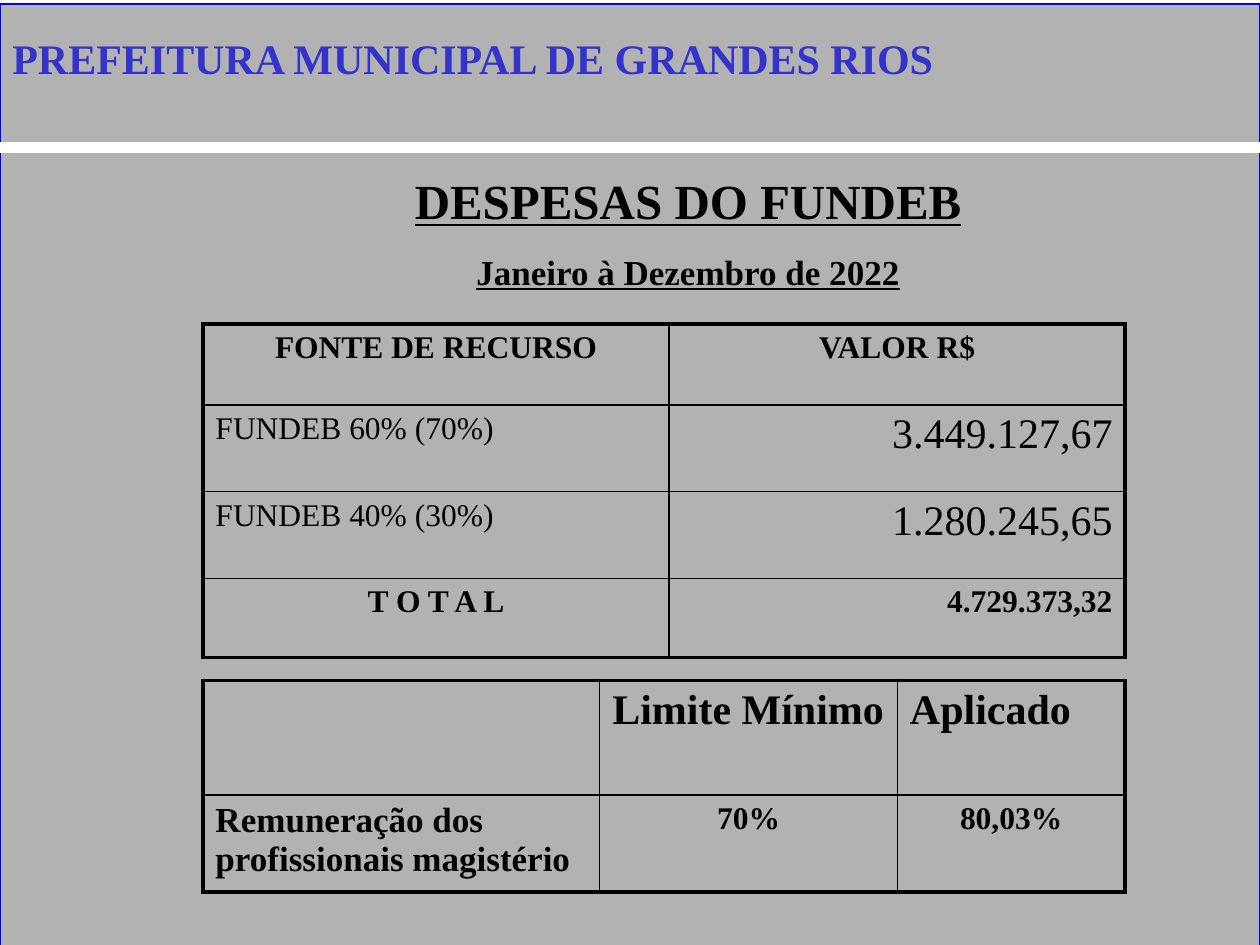
from dataclasses import dataclass

import pptx
import pptx.dml.color
import pptx.enum.shapes
import pptx.enum.text
import pptx.oxml
import pptx.oxml.ns
import pptx.util
from lxml import etree

Cm = pptx.util.Cm
Pt = pptx.util.Pt
ALIGN = pptx.enum.text.PP_ALIGN
FONT = "Times New Roman"
COLOURS = {
    "panel": "B2B2B2",
    "frame": "0000FF",
    "rule": "FFFFFF",
    "ink": "000000",
    "heading": "3333CC",
    "shadow": "808080",
}
OUTER_BORDER = 2.25
INNER_BORDER = 1


@dataclass
class Line:
    text: str
    size: int = 18
    bold: bool = True
    align: ALIGN = ALIGN.LEFT
    colour: str = "ink"
    underline: bool = False
    spacing: float = 1.0


@dataclass
class Grid:
    left: float
    top: float
    columns: list[float]
    rows: list[float]
    cells: list[list[Line]]


def colour(name: str) -> pptx.dml.color.RGBColor:
    return pptx.dml.color.RGBColor.from_string(COLOURS[name])


def write_line(para, line: Line) -> None:
    para.text = line.text
    para.alignment = line.align
    para.line_spacing = line.spacing
    for span in para.runs:
        span.font.name = FONT
        span.font.size = Pt(line.size)
        span.font.bold = line.bold
        span.font.underline = line.underline
        span.font.color.rgb = colour(line.colour)


def add_text(page, left: float, top: float, width: float, height: float, lines: list[Line]):
    box = page.shapes.add_textbox(Cm(left), Cm(top), Cm(width), Cm(height))
    frame = box.text_frame
    frame.word_wrap = True
    frame.text = "\n".join(line.text for line in lines)
    for para, line in zip(frame.paragraphs, lines):
        write_line(para, line)
    return box


def add_text_shadow(span) -> None:
    effects = pptx.oxml.parse_xml(
        f'<a:effectLst {pptx.oxml.ns.nsdecls("a")}>'
        '<a:outerShdw dist="35921" dir="2700000" algn="ctr">'
        f'<a:srgbClr val="{COLOURS["shadow"]}"/></a:outerShdw></a:effectLst>'
    )
    fill = span.font._element.find(pptx.oxml.ns.qn("a:solidFill"))
    fill.addnext(effects)


def add_border(cell, side: str, width: float) -> None:
    properties = cell._tc.get_or_add_tcPr()
    border = etree.SubElement(properties, pptx.oxml.ns.qn(f"a:ln{side}"), w=str(Pt(width)))
    fill = etree.SubElement(border, pptx.oxml.ns.qn("a:solidFill"))
    etree.SubElement(fill, pptx.oxml.ns.qn("a:srgbClr"), val=COLOURS["ink"])


def add_grid(page, grid: Grid) -> None:
    last_row, last_column = len(grid.rows) - 1, len(grid.columns) - 1
    table = page.shapes.add_table(
        len(grid.rows), len(grid.columns), Cm(grid.left), Cm(grid.top),
        Cm(sum(grid.columns)), Cm(sum(grid.rows)),
    ).table
    table.first_row = False
    table.horz_banding = False
    for column, width in zip(table.columns, grid.columns):
        column.width = Cm(width)
    for row, height in zip(table.rows, grid.rows):
        row.height = Cm(height)
    for r, lines in enumerate(grid.cells):
        for c, line in enumerate(lines):
            cell = table.cell(r, c)
            write_line(cell.text_frame.paragraphs[0], line)
            edges = {"L": c == 0, "R": c == last_column, "T": r == 0, "B": r == last_row}
            for side, is_outer in edges.items():
                add_border(cell, side, OUTER_BORDER if is_outer else INNER_BORDER)
            cell.fill.background()


def add_background(page, width: float, height: float) -> None:
    panel = page.shapes.add_shape(
        pptx.enum.shapes.MSO_SHAPE.RECTANGLE, Cm(0), Cm(0.08), Cm(width), Cm(height)
    )
    panel.shadow.inherit = False
    panel.fill.solid()
    panel.fill.fore_color.rgb = colour("panel")
    panel.line.color.rgb = colour("frame")
    panel.line.width = Pt(0.75)

    rule = page.shapes.add_connector(
        pptx.enum.shapes.MSO_CONNECTOR.STRAIGHT, Cm(0), Cm(2.97), Cm(width), Cm(2.97)
    )
    rule.line.color.rgb = colour("rule")
    rule.line.width = Pt(6)
    etree.SubElement(rule._element.spPr, pptx.oxml.ns.qn("a:effectLst"))


EXPENSES = Grid(
    4.09, 6.53, [9.4, 9.19], [1.63, 1.75, 1.75, 1.6],
    [
        [Line("FONTE DE RECURSO", align=ALIGN.CENTER), Line("VALOR R$", align=ALIGN.CENTER)],
        [Line("FUNDEB 60% (70%)", bold=False), Line("3.449.127,67", 24, False, ALIGN.RIGHT)],
        [Line("FUNDEB 40% (30%)", bold=False), Line("1.280.245,65", 24, False, ALIGN.RIGHT)],
        [Line("T O T A L", align=ALIGN.CENTER), Line("4.729.373,32", align=ALIGN.RIGHT)],
    ],
)
LIMITS = Grid(
    4.09, 13.72, [8, 6, 4.59], [2.31, 1.94],
    [
        [Line(""), Line("Limite Mínimo", 24), Line("Aplicado", 24)],
        [
            Line("Remuneração dos profissionais magistério", 20),
            Line("70%", align=ALIGN.CENTER),
            Line("80,03%", align=ALIGN.CENTER),
        ],
    ],
)


def main() -> None:
    width, height = 25.4, 19.05
    deck = pptx.Presentation()
    deck.slide_width, deck.slide_height = Cm(width), Cm(height)
    page = deck.slides.add_slide(deck.slide_layouts[6])

    add_background(page, width, height)
    add_text(page, 3.61, 2.72, 20.52, 14, [
        Line("DESPESAS DO FUNDEB", 28, align=ALIGN.CENTER, underline=True, spacing=1.5),
        Line("Janeiro à Dezembro de 2022", 20, align=ALIGN.CENTER, underline=True, spacing=1.5),
    ])
    for grid in (EXPENSES, LIMITS):
        add_grid(page, grid)
    heading = add_text(page, 0, 0.53, 24.1, 1.27, [
        Line("PREFEITURA MUNICIPAL DE GRANDES RIOS", 24, colour="heading"),
    ])
    add_text_shadow(heading.text_frame.paragraphs[0].runs[0])
    deck.save("out.pptx")


if __name__ == "__main__":
    main()
